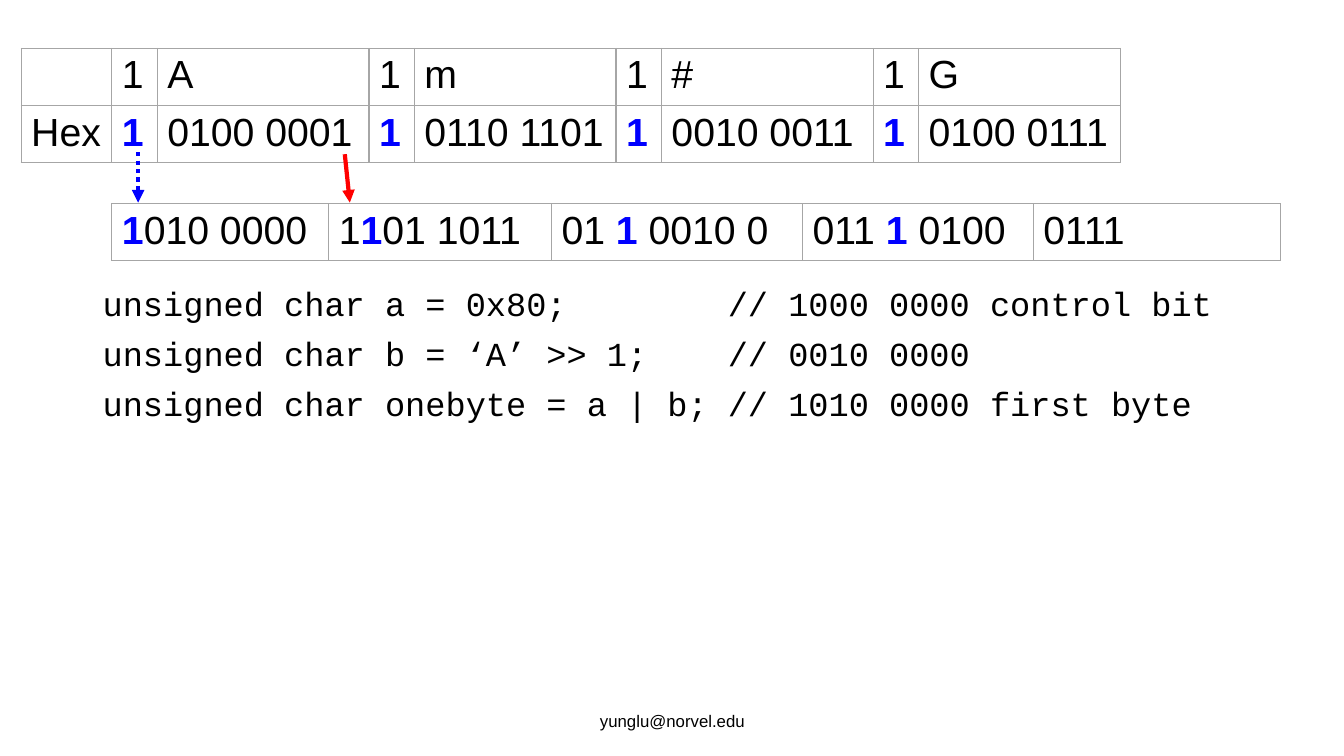
from lxml import etree
from pptx import Presentation
from pptx.dml.color import RGBColor
from pptx.enum.dml import MSO_LINE
from pptx.enum.shapes import MSO_CONNECTOR
from pptx.enum.text import MSO_ANCHOR, PP_ALIGN
from pptx.oxml.ns import qn
from pptx.util import Inches, Pt

STRAIGHT = MSO_CONNECTOR.STRAIGHT
DOTS = MSO_LINE.ROUND_DOT
MIDDLE = MSO_ANCHOR.MIDDLE
CENTER = PP_ALIGN.CENTER

COLORS = {"ink": "000000", "bit": "0000FF", "arrow": "FF0000", "grid": "A6A6A6"}

ROW = 0.535
TAB = 6.2

CHARS = ["A", "m", "#", "G"]
CODES = ["0100 0001", "0110 1101", "0010 0011", "0100 0111"]
BYTES = ["*1*010 0000", "1*1*01 1011", "01 *1* 0010 0", "011 *1* 0100", "0111"]
CODE = [
    ("unsigned char a = 0x80;", "// 1000 0000 control bit"),
    ("unsigned char b = ‘A’ >> 1;", "// 0010 0000"),
    ("unsigned char onebyte = a | b;", "// 1010 0000 first byte"),
]


def color(name):
    return RGBColor.from_string(COLORS[name])


def apply(item, values):
    for name, value in values.items():
        setattr(item, name, value)


def add_run(para, text, size, face="Arial", hue="ink", bold=False):
    run = para.add_run()
    run.text = text
    apply(run.font, {"size": Pt(size), "name": face, "bold": bold})
    run.font.color.rgb = color(hue)


def add_box(slide, left, top, width, height):
    box = slide.shapes.add_textbox(*map(Inches, (left, top, width, height)))
    box.text_frame.word_wrap = True
    return box.text_frame


def add_code(slide):
    frame = add_box(slide, 0.92, 2.8, 11.5, 3.96)
    for i, parts in enumerate(CODE):
        para = frame.add_paragraph() if i else frame.paragraphs[0]
        apply(para, {"line_spacing": 0.9, "space_before": Pt(10)})
        tabs = etree.SubElement(para._p.get_or_add_pPr(), qn("a:tabLst"))
        etree.SubElement(tabs, qn("a:tab"), pos=str(Inches(TAB)), algn="l")
        add_run(para, "\t".join(parts), 24, "Courier New")


def add_footer(slide, text):
    frame = add_box(slide, 4.42, 6.95, 4.5, 0.4)
    frame.vertical_anchor = MIDDLE
    para = frame.paragraphs[0]
    para.alignment = CENTER
    add_run(para, text, 12)


def add_grid(cell):
    props = cell._tc.get_or_add_tcPr()
    for i, side in enumerate(("lnL", "lnR", "lnT", "lnB")):
        edge = etree.Element(qn("a:" + side), w=str(Pt(1)))
        fill = etree.SubElement(edge, qn("a:solidFill"))
        etree.SubElement(fill, qn("a:srgbClr"), val=COLORS["grid"])
        props.insert(i, edge)


def fill_cell(cell, text):
    cell.fill.background()
    add_grid(cell)
    para = cell.text_frame.paragraphs[0]
    for i, part in enumerate(text.split("*")):
        if part:
            mark = i % 2 == 1
            add_run(para, part, 28, hue="bit" if mark else "ink", bold=mark)


def add_bits(slide, left, top, widths, rows):
    size = (left, top, sum(widths), ROW * len(rows))
    table = slide.shapes.add_table(len(rows), len(widths), *map(Inches, size)).table
    apply(table, {"first_row": False, "horz_banding": False})
    for col, width in zip(table.columns, widths):
        col.width = Inches(width)
    for r, texts in enumerate(rows):
        table.rows[r].height = Inches(ROW)
        for c, text in enumerate(texts):
            fill_cell(table.cell(r, c), text)


def add_arrow(slide, start, end, hue, dash=None):
    arrow = slide.shapes.add_connector(STRAIGHT, *map(Inches, start + end))
    apply(arrow.line, {"width": Pt(3), "dash_style": dash})
    arrow.line.color.rgb = color(hue)
    etree.SubElement(arrow.line._get_or_add_ln(), qn("a:tailEnd"), type="triangle")
    etree.SubElement(arrow._element.spPr, qn("a:effectLst"))


def main():
    deck = Presentation()
    apply(deck, {"slide_width": Inches(13.33), "slide_height": Inches(7.5)})
    slide = deck.slides.add_slide(deck.slide_layouts[6])
    add_code(slide)
    add_footer(slide, "yunglu@norvel.edu")
    top = [""]
    low = ["Hex"]
    for char, code in zip(CHARS, CODES):
        top += ["1", char]
        low += ["*1*", code]
    add_bits(slide, 0.21, 0.48, [0.9] + [0.45, 2.1, 0.45, 2] * 2, [top, low])
    add_bits(slide, 1.11, 2.02, [2.15, 2.21, 2.49, 2.29, 2.45], [BYTES])
    add_arrow(slide, (1.37, 1.51), (1.37, 2.01), "bit", DOTS)
    add_arrow(slide, (3.42, 1.53), (3.47, 2.01), "arrow")
    deck.save("out.pptx")


if __name__ == "__main__":
    main()
